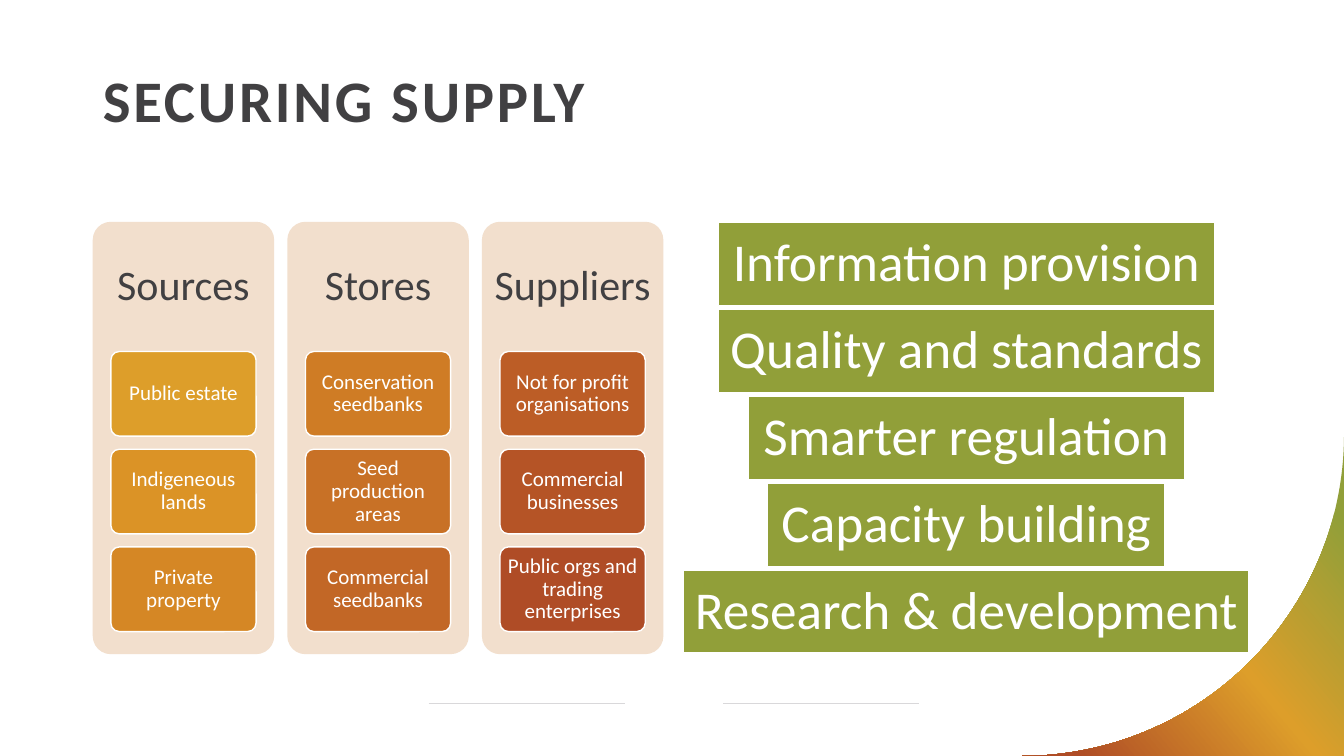
from copy import deepcopy
from math import cos, pi, sin

from lxml import etree
from pptx import Presentation
from pptx.dml.color import RGBColor
from pptx.enum.shapes import MSO_CONNECTOR, MSO_SHAPE
from pptx.enum.text import MSO_ANCHOR, PP_ALIGN
from pptx.oxml.ns import qn
from pptx.util import Inches, Pt

STRAIGHT = MSO_CONNECTOR.STRAIGHT
RECTANGLE, ROUNDED = MSO_SHAPE.RECTANGLE, MSO_SHAPE.ROUNDED_RECTANGLE
TOP, MIDDLE = MSO_ANCHOR.TOP, MSO_ANCHOR.MIDDLE
CENTER, LEFT = PP_ALIGN.CENTER, PP_ALIGN.LEFT

WIDTH, HEIGHT = 13.33, 7.5
FONT = "Calibri"
WHITE, INK, SAND, GREEN = "FFFFFF", "414042", "F2DFCD", "919F39"
GOLD, RUST, RULE = "DD9E2A", "AF4C26", "D9D8DA"

SUPPLY_CHAIN = [
    ("Sources", [("Public estate", GOLD), ("Indigeneous lands", "DB9326"),
                 ("Private property", "D58725")]),
    ("Stores", [("Conservation seedbanks", "CF7C25"), ("Seed production areas", "C87126"),
                ("Commercial seedbanks", "C26726")]),
    ("Suppliers", [("Not for profit organisations", "BC5D26"),
                   ("Commercial businesses", "B55426"),
                   ("Public orgs and trading enterprises", RUST)]),
]
ENABLERS = [
    ("Information provision", 4.92),
    ("Quality and standards", 4.92),
    ("Smarter regulation", 4.33),
    ("Capacity building", 3.94),
    ("Research & development", 5.61),
]


def rgb(value):
    return RGBColor.from_string(value)


def inches(box):
    return [Inches(length) for length in box]


def write(holder, wording, size, color, inset=(0.04, 0.03), align=CENTER, anchor=MIDDLE):
    frame = holder.text_frame
    frame.text = wording
    frame.word_wrap = True
    frame.vertical_anchor = anchor
    frame.margin_left = frame.margin_right = Inches(inset[0])
    frame.margin_top = frame.margin_bottom = Inches(inset[1])
    paragraph = frame.paragraphs[0]
    paragraph.alignment = align
    paragraph.line_spacing = 0.9
    font = paragraph.runs[0].font
    font.name, font.size = FONT, Pt(size)
    font.color.rgb = rgb(color)
    return font


def panel(slide, kind, box, fill, outlined=True):
    shape = slide.shapes.add_shape(kind, *inches(box))
    shape.shadow.inherit = False
    shape.fill.solid()
    shape.fill.fore_color.rgb = rgb(fill)
    if kind == ROUNDED:
        shape.adjustments[0] = 0.1
    if outlined:
        shape.line.color.rgb = rgb(WHITE)
        shape.line.width = Pt(1)
    else:
        shape.line.fill.background()
    return shape


def footer_rules(slide, box):
    left, top, width, _ = box
    length = width * 0.4
    for start in (left, left + width - length):
        rule = slide.shapes.add_connector(
            STRAIGHT, *inches((start, top, start + length, top)))
        rule.line.color.rgb = rgb(RULE)
        rule.line.width = Pt(0.5)
        etree.SubElement(rule._element.spPr, qn("a:effectLst"))


def corner_sweep(slide, box):
    left, top, width, height = box
    steps = 60
    angles = [pi / 2 * step / steps for step in range(steps + 1)]
    arc = [inches((left + width * cos(a), top + height * sin(a))) for a in angles]
    builder = slide.shapes.build_freeform(*arc[0])
    builder.add_line_segments(arc[1:] + [inches((left + width, top + height))])
    sweep = builder.convert_to_shape()
    sweep.shadow.inherit = False
    sweep.line.fill.background()
    sweep.fill.gradient()
    sweep.fill.gradient_angle = 220
    stop_list = sweep._element.spPr.find(".//" + qn("a:gsLst"))
    stop_list.insert(1, deepcopy(stop_list[0]))
    blend = ((0.12, GREEN), (0.5, GOLD), (0.91, RUST))
    for stop, (position, color) in zip(sweep.fill.gradient_stops, blend):
        stop.position = position
        stop.color.rgb = rgb(color)


def heading(slide, box, wording):
    title = slide.shapes.title
    title.left, title.top, title.width, title.height = inches(box)
    font = write(title, wording, 42, INK, (0.1, 0.05), LEFT, TOP)
    font.bold = True
    title.text_frame.paragraphs[0].runs[0]._r.get_or_add_rPr().set("spc", "200")


def supply_column(slide, box, name, tiles):
    left, top, width, height = box
    panel(slide, ROUNDED, box, SAND, outlined=False)
    header = slide.shapes.add_textbox(*inches((left, top, width, height * 0.3)))
    write(header, name, 30, INK, (0.1, 0.12))
    pitch = height * 0.226
    for row, (wording, color) in enumerate(tiles):
        tile_box = (left + width * 0.1, top + height * 0.3 + row * pitch, width * 0.8, 0.84)
        write(panel(slide, ROUNDED, tile_box, color), wording, 15, WHITE)


def supply_chain(slide, box):
    left, top, width, height = box
    column_width = 1.8
    pitch = (width - column_width) / (len(SUPPLY_CHAIN) - 1)
    for column, (name, tiles) in enumerate(SUPPLY_CHAIN):
        supply_column(slide, (left + column * pitch, top, column_width, height), name, tiles)


def enabler_stack(slide, box):
    left, top, width, height = box
    bar_height = 0.82
    pitch = (height - bar_height) / (len(ENABLERS) - 1)
    for row, (wording, bar_width) in enumerate(ENABLERS):
        bar_box = (left + (width - bar_width) / 2, top + row * pitch, bar_width, bar_height)
        write(panel(slide, RECTANGLE, bar_box, GREEN), wording, 38, WHITE, (0.05, 0.1))


def main():
    deck = Presentation()
    deck.slide_width, deck.slide_height = Inches(WIDTH), Inches(HEIGHT)
    slide = deck.slides.add_slide(deck.slide_layouts[5])
    footer_rules(slide, (4.25, 6.98, 4.87, 0))
    corner_sweep(slide, (WIDTH - 3.19, HEIGHT - 3.19, 3.19, 3.19))
    heading(slide, (0.92, 0.66, 11.5, 1.32), "SECURING SUPPLY")
    supply_chain(slide, (0.92, 2.2, 5.66, 4.29))
    enabler_stack(slide, (6.78, 2.21, 5.61, 4.27))
    deck.save("out.pptx")


if __name__ == "__main__":
    main()
